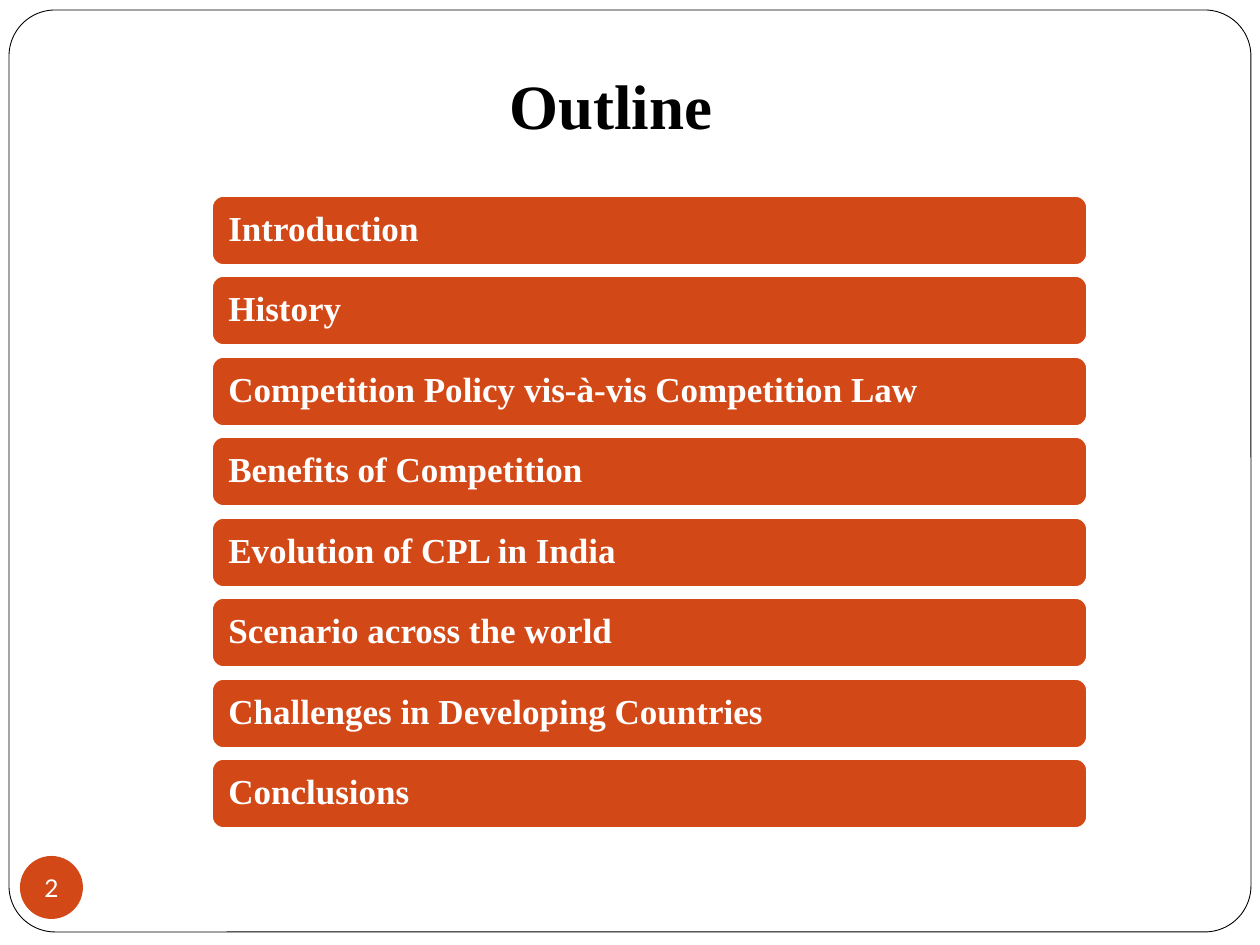
from pptx import Presentation
from pptx.dml.color import RGBColor
from pptx.enum.shapes import MSO_SHAPE as Shape
from pptx.enum.text import MSO_ANCHOR as Anchor, PP_ALIGN as Align
from pptx.util import Pt

EMU_PER_PX = 914400 // 126
SLIDE_WIDTH, SLIDE_HEIGHT = 1260, 945
COLORS = {"accent": "D34817", "paper": "FFFFFF", "ink": "000000"}
SERIF, SANS = "Times New Roman", "Lato"
TOPICS = [
    "Introduction",
    "History",
    "Competition Policy vis-à-vis Competition Law",
    "Benefits of Competition",
    "Evolution of CPL in India",
    "Scenario across the world",
    "Challenges in Developing Countries",
    "Conclusions",
]
BAR_LEFT, BAR_WIDTH, BAR_HEIGHT = 212, 875, 69
FIRST_TOP, LAST_TOP = 196, 759


def px(length):
    return length * EMU_PER_PX


def color(name):
    return RGBColor.from_string(COLORS[name])


def add_shape(page, kind, bounds, fill, line=None, line_width=1):
    shape = page.shapes.add_shape(kind, *map(px, bounds))
    shape.shadow.inherit = False
    shape.fill.solid()
    shape.fill.fore_color.rgb = color(fill)
    if line:
        shape.line.color.rgb = color(line)
        shape.line.width = Pt(line_width)
    else:
        shape.line.fill.background()
    return shape


def set_text(box, text, size, font, ink, align, anchor, insets, bold=False):
    frame = box.text_frame
    frame.text = text
    frame.vertical_anchor = anchor
    frame.margin_left, frame.margin_top, frame.margin_right, frame.margin_bottom = map(px, insets)
    para = frame.paragraphs[0]
    para.alignment = align
    span = para.runs[0].font
    span.name, span.size, span.bold = font, Pt(size), bold
    span.color.rgb = color(ink)
    return frame


def add_border(page):
    border = add_shape(page, Shape.ROUNDED_RECTANGLE, (9, 10, 1242, 922), "paper", "ink", 0.5)
    border.adjustments[0] = 0.05


def add_title(page, text):
    box = page.shapes.add_textbox(*map(px, (25, 35, 1172, 120)))
    frame = set_text(box, text, 36, SERIF, "ink", Align.CENTER, Anchor.BOTTOM,
                     (13, 6, 13, 13), bold=True)
    frame.word_wrap = True


def add_page_number(page, number):
    badge = add_shape(page, Shape.OVAL, (20, 856, 63, 63), "accent")
    frame = set_text(badge, str(number), 14, SANS, "paper", Align.CENTER, Anchor.MIDDLE,
                     (0, 0, 0, 0))
    frame.word_wrap = False


def add_topic(page, text, top):
    bar = add_shape(page, Shape.ROUNDED_RECTANGLE, (BAR_LEFT, top, BAR_WIDTH, BAR_HEIGHT),
                    "accent", "paper")
    frame = set_text(bar, text, 20, SERIF, "paper", Align.LEFT, Anchor.MIDDLE,
                     (13, 10, 13, 10), bold=True)
    frame.word_wrap = True
    frame.paragraphs[0].line_spacing = 0.9


def main():
    deck = Presentation()
    deck.slide_width, deck.slide_height = px(SLIDE_WIDTH), px(SLIDE_HEIGHT)
    page = deck.slides.add_slide(deck.slide_layouts[6])
    add_border(page)
    add_title(page, "Outline")
    add_page_number(page, 2)
    pitch = (LAST_TOP - FIRST_TOP) / (len(TOPICS) - 1)
    for index, topic in enumerate(TOPICS):
        add_topic(page, topic, FIRST_TOP + round(index * pitch))
    deck.save("out.pptx")


if __name__ == "__main__":
    main()
